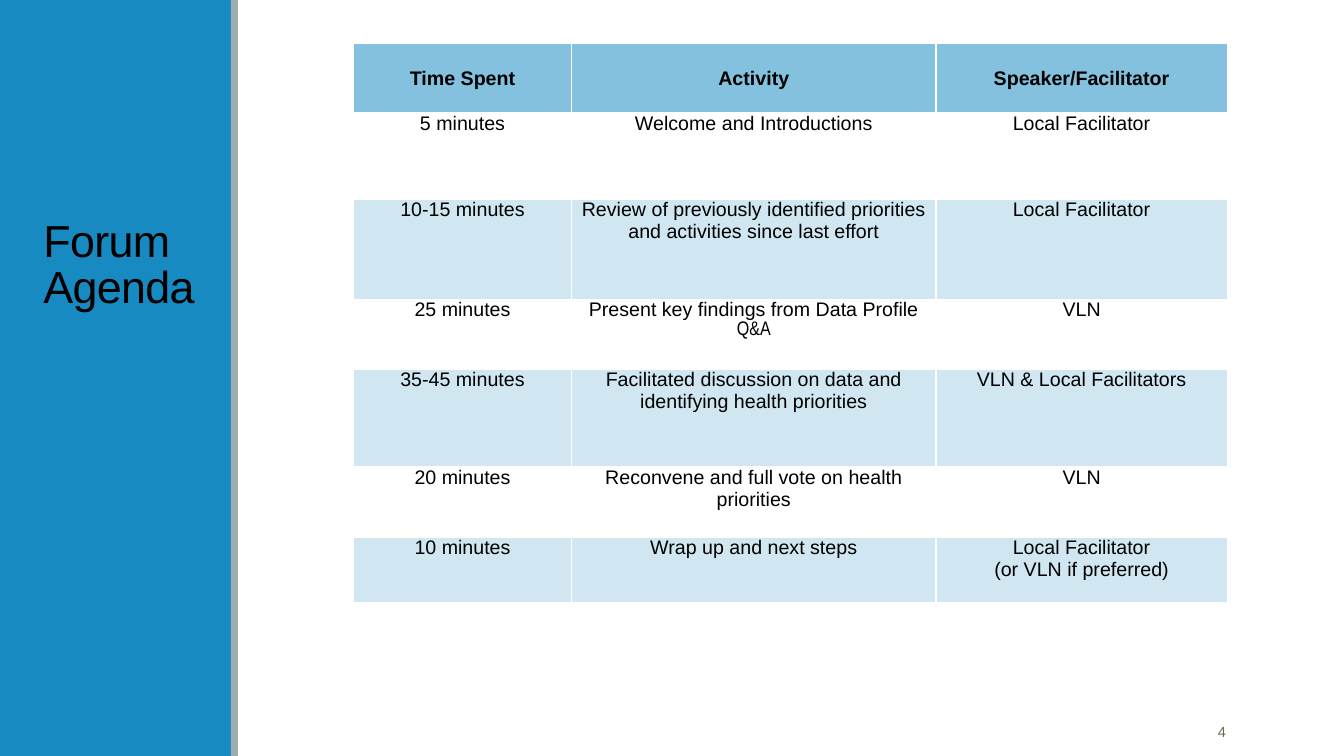
import pptx
import pptx.util
import pptx.dml.color
import pptx.enum.shapes
import pptx.enum.text
import pptx.oxml.ns
from lxml import etree

Pt = pptx.util.Pt
RGB = pptx.dml.color.RGBColor.from_string
ANCHOR = pptx.enum.text.MSO_ANCHOR
ALIGN = pptx.enum.text.PP_ALIGN
qn = pptx.oxml.ns.qn

THEME = {
    "blue": "178AC1", "gray": "9FADB1", "white": "FFFFFF",
    "text": "000000", "number": "637052",
    "font": "Arial", "narrow": "Arial Narrow",
    "title_size": 32, "table_size": 14, "number_size": 10.5,
    "header_alpha": 53, "band_alpha": 20,
}


def format_runs(p, size, color, bold=False, font=THEME["font"]):
    for r in p.runs:
        r.font.name = font
        r.font.size = Pt(size)
        r.font.bold = bold
        r.font.color.rgb = RGB(THEME[color])


def add_label(text, left, top, width, height, anchor):
    sp = s.shapes.add_textbox(Pt(left), Pt(top), Pt(width), Pt(height))
    tf = sp.text_frame
    tf.word_wrap = True
    tf.vertical_anchor = anchor
    tf.text = text
    return tf.paragraphs[0]


prs = pptx.Presentation()
prs.slide_width, prs.slide_height = Pt(960), Pt(540)
s = prs.slides.add_slide(prs.slide_layouts[6])

# Side panel
for left, width, color in [(0, 165, "blue"), (165, 5, "gray")]:
    sp = s.shapes.add_shape(pptx.enum.shapes.MSO_SHAPE.RECTANGLE,
                            Pt(left), 0, Pt(width), prs.slide_height)
    sp.shadow.inherit = False
    sp.fill.solid()
    sp.fill.fore_color.rgb = RGB(THEME[color])
    sp.line.fill.background()

# Title
p = add_label("Forum Agenda", 24, 46.8, 206.6, 180, ANCHOR.BOTTOM)
p.line_spacing = 0.85
format_runs(p, THEME["title_size"], "text")
p.runs[0].font._element.set("spc", "-50")

# Agenda table
agenda = [
    ("Time Spent", "Activity", "Speaker/Facilitator"),
    ("5 minutes", "Welcome and Introductions", "Local Facilitator"),
    ("10-15 minutes",
     "Review of previously identified priorities and activities since last effort",
     "Local Facilitator"),
    ("25 minutes", "Present key findings from Data Profile\nQ&A", "VLN"),
    ("35-45 minutes",
     "Facilitated discussion on data and identifying health priorities",
     "VLN & Local Facilitators"),
    ("20 minutes", "Reconvene and full vote on health priorities", "VLN"),
    ("10 minutes", "Wrap up and next steps",
     "Local Facilitator\n(or VLN if preferred)"),
]
col_widths = [155.8, 260.3, 208.1]
row_heights = [49.7, 61.5, 71.5, 50, 70, 50, 46.8]
frame = s.shapes.add_table(len(agenda), len(col_widths), Pt(252.5), Pt(31),
                           Pt(sum(col_widths)), Pt(sum(row_heights)))
table = frame.table
table.first_row = True
table.horz_banding = False
for column, width in zip(table.columns, col_widths):
    column.width = Pt(width)

for i, (row, height) in enumerate(zip(agenda, row_heights)):
    table.rows[i].height = Pt(height)
    header = i == 0
    for j, text in enumerate(row):
        cell = table.cell(i, j)
        cell.margin_left = cell.margin_right = 0
        cell.margin_top = cell.margin_bottom = 0
        cell.vertical_anchor = ANCHOR.MIDDLE if header else ANCHOR.TOP
        cell.text_frame.text = text
        for p in cell.text_frame.paragraphs:
            p.alignment = ALIGN.CENTER
            font = THEME["narrow" if p.text == "Q&A" else "font"]
            format_runs(p, THEME["table_size"], "text", header, font)

        # White cell borders
        tcPr = cell._tc.get_or_add_tcPr()
        for side in ("a:lnL", "a:lnR", "a:lnT", "a:lnB"):
            ln = etree.SubElement(tcPr, qn(side), w=str(Pt(1)))
            fill = etree.SubElement(ln, qn("a:solidFill"))
            etree.SubElement(fill, qn("a:srgbClr"), val=THEME["white"])

        # Translucent header and even rows
        if i % 2:
            cell.fill.background()
        else:
            cell.fill.solid()
            cell.fill.fore_color.rgb = RGB(THEME["blue"])
            alpha = THEME["header_alpha" if header else "band_alpha"]
            clr = tcPr.find(qn("a:solidFill")).find(qn("a:srgbClr"))
            etree.SubElement(clr, qn("a:alpha"), val=str(alpha * 1000))

# Slide number
p = add_label("4", 779.8, 508.3, 103, 28.8, ANCHOR.MIDDLE)
p.alignment = ALIGN.RIGHT
format_runs(p, THEME["number_size"], "number")

prs.save("out.pptx")
